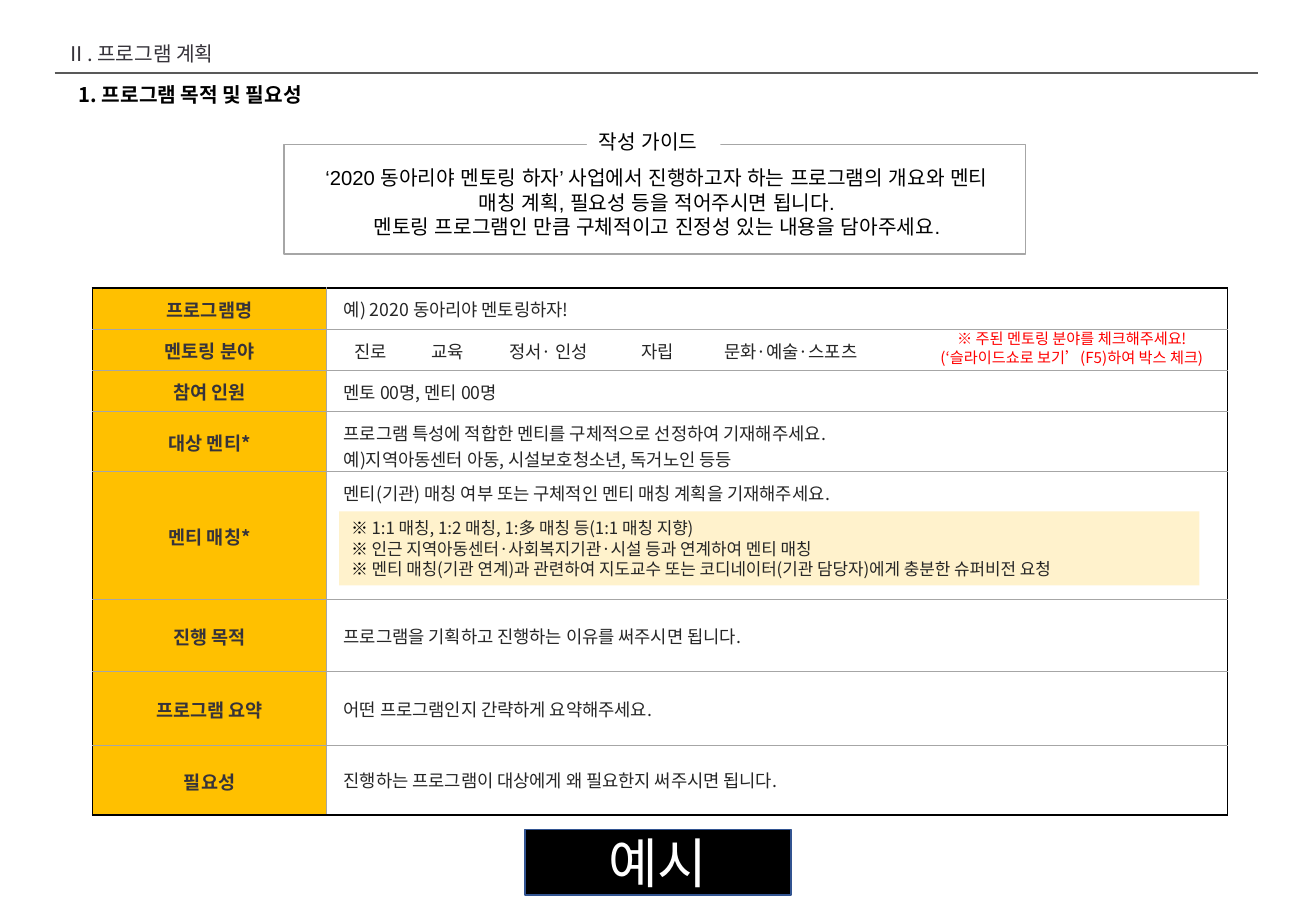
import pptx
import pptx.util
import pptx.dml.color
import pptx.enum.shapes
import pptx.enum.text
import pptx.oxml.ns
from lxml import etree

COLORS = {
    "black": "000000", "white": "FFFFFF", "ink": "36333A", "body": "262626",
    "rule": "595959", "grid": "A6A6A6", "gold": "FFC000", "cream": "FFF2CC",
    "red": "FF0000", "navy": "325491",
}
KOREAN = "Noto Sans CJK KR"
LATIN = "Arial"
SLIDE_SIZE = (1083, 750)

TITLE = "Ⅱ. 프로그램 계획"
SUBTITLE = "1. 프로그램 목적 및 필요성"
GUIDE_LABEL = "작성 가이드"
GUIDE_LINES = [
    "‘2020 동아리야 멘토링 하자’ 사업에서 진행하고자 하는 프로그램의 개요와 멘티 매칭 계획, 필요성 등을 적어주시면 됩니다.",
    "멘토링 프로그램인 만큼 구체적이고 진정성 있는 내용을 담아주세요.",
]
FIELDS = ["진로", "교육", "정서· 인성", "자립", "문화·예술·스포츠"]
FIELD_STOPS = [9, 72, 136, 245, 313]
FIELD_ROW = 1
MATCHING_ROW = 4
PLAN_ROWS = [
    ("프로그램명", 34, ["예) 2020 동아리야 멘토링하자!"]),
    ("멘토링 분야", 34, ["".join("\t" + field for field in FIELDS)]),
    ("참여 인원", 34, ["멘토 00명, 멘티 00명"]),
    ("대상 멘티*", 34, ["프로그램 특성에 적합한 멘티를 구체적으로 선정하여 기재해주세요.",
                    "예)지역아동센터 아동, 시설보호청소년, 독거노인 등등"]),
    ("멘티 매칭*", 106, ["멘티(기관) 매칭 여부 또는 구체적인 멘티 매칭 계획을 기재해주세요."]),
    ("진행 목적", 59, ["프로그램을 기획하고 진행하는 이유를 써주시면 됩니다."]),
    ("프로그램 요약", 61, ["어떤 프로그램인지 간략하게 요약해주세요."]),
    ("필요성", 57, ["진행하는 프로그램이 대상에게 왜 필요한지 써주시면 됩니다."]),
]
PLAN_BOX = (76, 237, 934, 433)
PLAN_COLUMNS = (193, 741)
LABEL_INSETS = (1, 1, 1, 0)
BODY_INSETS = (14, 7, 14, 7)
CHECK_LINES = ["※ 주된 멘토링 분야를 체크해주세요!", "(‘슬라이드쇼로 보기’(F5)하여 박스 체크)"]
MATCHING_LINES = [
    "1:1 매칭, 1:2 매칭, 1:多 매칭 등(1:1 매칭 지향)",
    "인근 지역아동센터·사회복지기관·시설 등과 연계하여 멘티 매칭",
    "멘티 매칭(기관 연계)과 관련하여 지도교수 또는 코디네이터(기관 담당자)에게 충분한 슈퍼비전 요청",
]
BADGE = "예시"

ALIGN = pptx.enum.text.PP_ALIGN
ANCHOR = pptx.enum.text.MSO_ANCHOR
qn = pptx.oxml.ns.qn


def px(value):
    return pptx.util.Emu(value * 9144)


def rgb(name):
    return pptx.dml.color.RGBColor.from_string(COLORS[name])


def write(frame, lines, size, color, font=KOREAN, bold=False, align=ALIGN.LEFT,
          spacing=None, before=None):
    for index, line in enumerate(lines):
        paragraph = frame.paragraphs[0] if index == 0 else frame.add_paragraph()
        paragraph.alignment = align
        if spacing:
            paragraph.line_spacing = spacing
        if before is not None:
            paragraph.space_before = pptx.util.Pt(before)
        runs = [(line, color)] if isinstance(line, str) else line
        for text, run_color in runs:
            run = paragraph.add_run()
            run.text = text
            run.font.size = pptx.util.Pt(size)
            run.font.bold = bold
            run.font.name = font
            run.font.color.rgb = rgb(run_color)
            latin = run.font._element.find(qn("a:latin"))
            east_asian = etree.Element(qn("a:ea"), typeface=font)
            latin.addnext(east_asian)


def add_box(box, fill=None, line=None):
    shape = slide.shapes.add_shape(
        pptx.enum.shapes.MSO_SHAPE.RECTANGLE, *map(px, box))
    shape.shadow.inherit = False
    if fill:
        shape.fill.solid()
        shape.fill.fore_color.rgb = rgb(fill)
    else:
        shape.fill.background()
    if line:
        shape.line.color.rgb = rgb(line)
        shape.line.width = pptx.util.Pt(1)
    else:
        shape.line.fill.background()
    shape.text_frame.vertical_anchor = ANCHOR.TOP
    return shape


def add_text(box, wrap=True):
    frame = slide.shapes.add_textbox(*map(px, box)).text_frame
    frame.word_wrap = wrap
    return frame


def set_borders(cell, outer_sides):
    properties = cell._tc.get_or_add_tcPr()
    for position, side in enumerate("LRTB"):
        outer = side in outer_sides
        line = etree.Element(qn("a:ln" + side), w="12700" if outer else "6350")
        fill = etree.SubElement(line, qn("a:solidFill"))
        etree.SubElement(fill, qn("a:srgbClr"), val=COLORS["black" if outer else "grid"])
        properties.insert(position, line)


def format_cell(cell, fill, insets, outer_sides):
    cell.fill.solid()
    cell.fill.fore_color.rgb = rgb(fill)
    cell.vertical_anchor = ANCHOR.MIDDLE
    cell.margin_left, cell.margin_top, cell.margin_right, cell.margin_bottom = map(px, insets)
    set_borders(cell, outer_sides)


def add_plan_table():
    shape = slide.shapes.add_table(len(PLAN_ROWS), 2, *map(px, PLAN_BOX))
    table = shape.table
    table.first_row = False
    table.horz_banding = False
    for column, width in zip(table.columns, PLAN_COLUMNS):
        column.width = px(width)
    last = len(PLAN_ROWS) - 1
    for index, (label, height, lines) in enumerate(PLAN_ROWS):
        table.rows[index].height = px(height)
        edges = ("T" if index == 0 else "") + ("B" if index == last else "")
        label_cell, body_cell = table.cell(index, 0), table.cell(index, 1)
        format_cell(label_cell, "gold", LABEL_INSETS, "L" + edges)
        format_cell(body_cell, "white", BODY_INSETS, "R" + edges)
        write(label_cell.text_frame, [label], 11, "ink", bold=True, align=ALIGN.CENTER)
        write(body_cell.text_frame, lines, 10.5, "body")
    shape.height = px(PLAN_BOX[3])
    table.cell(MATCHING_ROW, 1).vertical_anchor = ANCHOR.TOP
    field_paragraph = table.cell(FIELD_ROW, 1).text_frame.paragraphs[0]
    tabs = etree.SubElement(field_paragraph._p.get_or_add_pPr(), qn("a:tabLst"))
    for stop in FIELD_STOPS:
        etree.SubElement(tabs, qn("a:tab"), pos=str(px(stop)), algn="l")


presentation = pptx.Presentation()
presentation.slide_width, presentation.slide_height = map(px, SLIDE_SIZE)
slide = presentation.slides.add_slide(presentation.slide_layouts[5])

add_box((234, 119, 610, 90), line="grid")

title = slide.shapes.title
title.left, title.top, title.width, title.height = map(px, (45, 21, 154, 38))
title.text_frame.word_wrap = True
title.text_frame.auto_size = pptx.enum.text.MSO_AUTO_SIZE.NONE
title.text_frame.vertical_anchor = ANCHOR.BOTTOM
write(title.text_frame, [TITLE], 12, "ink", spacing=0.9, before=0)

rule = slide.shapes.add_connector(
    pptx.enum.shapes.MSO_CONNECTOR.STRAIGHT, *map(px, (45, 60, 1035, 60)))
rule.line.color.rgb = rgb("rule")
rule.line.width = pptx.util.Pt(1.5)
etree.SubElement(rule._element.spPr, qn("a:effectLst"))

write(add_text((55, 65, 375, 32)), [SUBTITLE], 12, "black", bold=True,
      spacing=0.9, before=0)

guide_spacing = pptx.util.Pt(14.6)
guide_label = add_box((483, 101, 110, 30), fill="white")
write(guide_label.text_frame, [GUIDE_LABEL], 12, "black", LATIN, spacing=guide_spacing)
write(add_text((241, 131, 599, 71)), GUIDE_LINES, 12, "black", LATIN,
      align=ALIGN.CENTER, spacing=guide_spacing)

add_plan_table()

badge = add_box((432, 683, 219, 54), fill="black", line="navy")
badge.text_frame.vertical_anchor = ANCHOR.MIDDLE
write(badge.text_frame, [BADGE], 32, "white", align=ALIGN.CENTER)

write(add_text((754, 266, 256, 40), wrap=False), CHECK_LINES, 9, "red",
      align=ALIGN.CENTER, spacing=pptx.util.Pt(11.2))

matching_note = add_box((279, 421, 708, 61), fill="cream")
write(matching_note.text_frame,
      [[("※ ", "black"), (line, "body")] for line in MATCHING_LINES],
      10, "body", spacing=pptx.util.Pt(12.2))

presentation.save("out.pptx")
